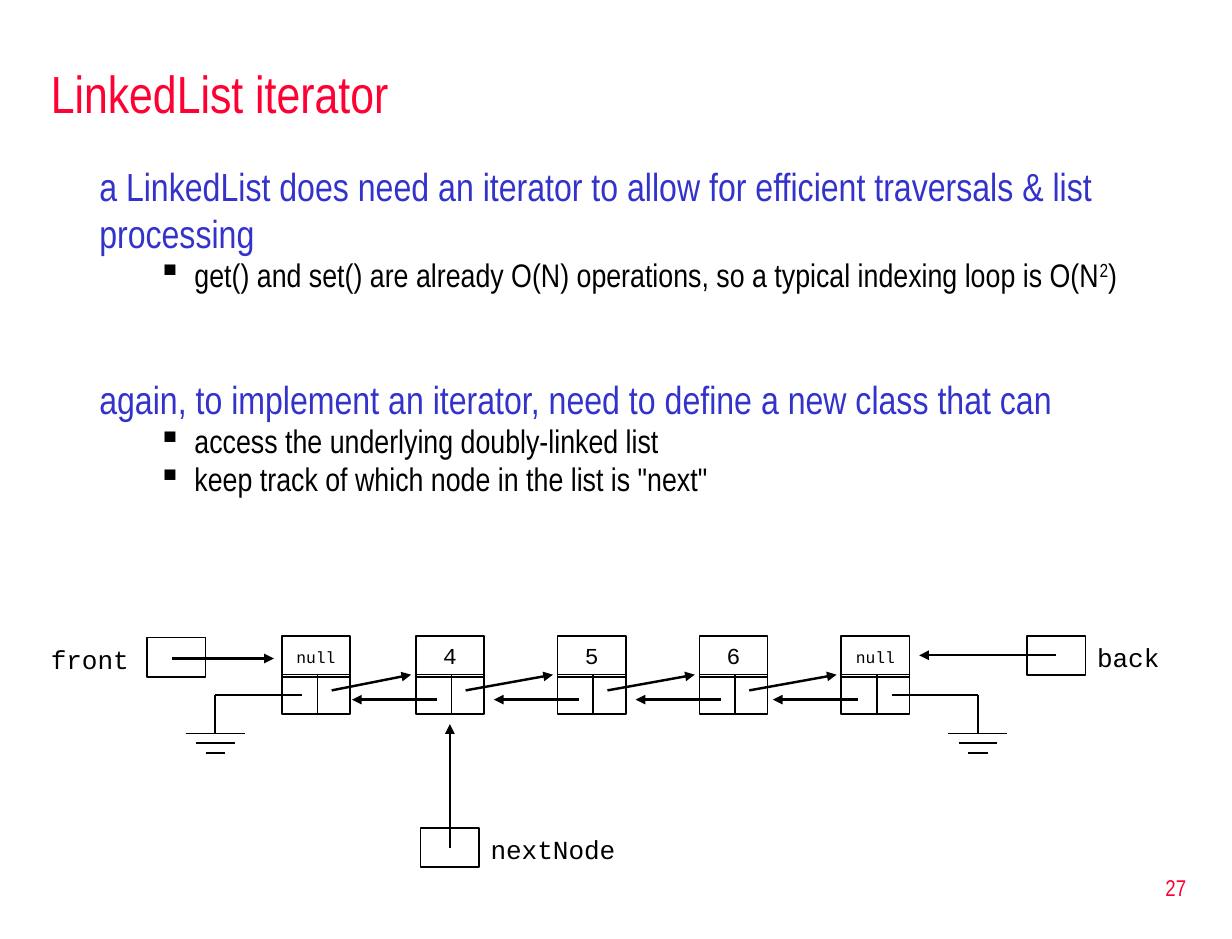
from pptx import Presentation
from pptx import util as u
from pptx.dml.color import RGBColor
from pptx.enum import shapes, text
from pptx.oxml.ns import qn
from lxml import etree

Cm, Pt = u.Cm, u.Pt
COLORS = {"accent": "FF0033", "heading": "3333CC", "ink": "000000"}
SANS, MONO = "Arial Narrow", "Courier New"

CELL_W, VALUE_H, LINKS_H = 1.48, 0.89, 0.85
POINTER_W, POINTER_H = 1.27, 0.85
VALUE_TOP, LINKS_TOP = 13.76, 14.6
BACK_LINK_Y = 15.14


def style(paragraph, size, font, color):
    for run in paragraph.runs:
        run.font.size = Pt(size)
        run.font.name = font
        run.font.color.rgb = RGBColor.from_string(COLORS[color])


def add_label(slide, words, left, top, width, height, size, font=MONO,
              color="ink", anchor=text.MSO_ANCHOR.TOP, align=text.PP_ALIGN.LEFT):
    frame = slide.shapes.add_textbox(Cm(left), Cm(top), Cm(width), Cm(height)).text_frame
    frame.word_wrap = True
    frame.vertical_anchor = anchor
    frame.text = words
    frame.paragraphs[0].alignment = align
    style(frame.paragraphs[0], size, font, color)


def add_line(slide, x1, y1, x2, y2, arrow=False):
    line = slide.shapes.add_connector(
        shapes.MSO_CONNECTOR.STRAIGHT, Cm(x1), Cm(y1), Cm(x2), Cm(y2))
    line.line.color.rgb = RGBColor.from_string(COLORS["ink"])
    line.line.width = Pt(1.5 if arrow else 1)
    if arrow:
        etree.SubElement(line.line._get_or_add_ln(), qn("a:tailEnd"), type="triangle")
    etree.SubElement(line._element.spPr, qn("a:effectLst"))


def add_cell(slide, left, top, width, height):
    cell = slide.shapes.add_shape(
        shapes.MSO_SHAPE.RECTANGLE, Cm(left), Cm(top), Cm(width), Cm(height))
    cell.shadow.inherit = False
    cell.fill.background()
    cell.line.color.rgb = RGBColor.from_string(COLORS["ink"])
    cell.line.width = Pt(1)
    return cell


def add_node(slide, left, value):
    """A value cell above a pair of link cells."""
    add_cell(slide, left, LINKS_TOP, CELL_W, LINKS_H)
    frame = add_cell(slide, left, VALUE_TOP, CELL_W, VALUE_H).text_frame
    is_null = value == "null"
    frame.vertical_anchor = text.MSO_ANCHOR.TOP
    frame.margin_top = Cm(0.25 if is_null else 0.13)
    frame.text = value
    frame.paragraphs[0].alignment = text.PP_ALIGN.CENTER
    style(frame.paragraphs[0], 10 if is_null else 14, MONO, "ink")
    middle = left + CELL_W / 2 + 0.03
    add_line(slide, middle, LINKS_TOP, middle, LINKS_TOP + LINKS_H)


def add_ground(slide, link_x, stem_x):
    """The ground symbol that ends a null link."""
    top, bottom = 15.04, 15.87
    add_line(slide, link_x, top, stem_x, top)
    add_line(slide, stem_x, top, stem_x, bottom)
    for step, half in enumerate((0.64, 0.42, 0.21)):
        y = bottom + 0.21 * step
        add_line(slide, stem_x - half, y, stem_x + half, y)


def add_pointer(slide, name, name_x, name_y, name_w, left, top, arrow):
    add_cell(slide, left, top, POINTER_W, POINTER_H)
    add_label(slide, name, name_x, name_y, name_w, 0.94, 16)
    add_line(slide, *arrow, arrow=True)


def add_points(slide):
    points = [
        (0, 5, "a LinkedList does need an iterator to allow for efficient "
               "traversals & list processing"),
        (1, 4, "get() and set() are already O(N) operations, so a typical "
               "indexing loop is O(N"),
        (0, 50, "again, to implement an iterator, need to define a new class that can"),
        (1, 4, "access the underlying doubly-linked list"),
        (1, 4, 'keep track of which node in the list is "next"'),
    ]
    frame = slide.shapes.add_textbox(Cm(1.9), Cm(3.38), Cm(23.5), Cm(8.05)).text_frame
    frame.word_wrap = True
    for number, (level, gap, words) in enumerate(points):
        point = frame.paragraphs[0] if number == 0 else frame.add_paragraph()
        point.text = words
        point.level = level
        point.space_before = Pt(gap)
        if words.endswith("O(N"):
            exponent = point.add_run()
            exponent.text = "2"
            exponent.font._element.set("baseline", "30000")
            point.add_run().text = ")"
        if level == 0:
            style(point, 24, SANS, "heading")
            continue
        style(point, 20, SANS, "ink")
        point.line_spacing = 0.8
        properties = point._p.get_or_add_pPr()
        properties.set("marL", str(Cm(2.06)))
        properties.set("indent", str(-Cm(0.79)))
        etree.SubElement(properties, qn("a:buChar"), char="▪")


def add_linked_list(slide):
    lefts = [6.1] + [9 + 3.07 * step for step in range(4)]
    for left, value in zip(lefts, ("null", "4", "5", "6", "null")):
        add_node(slide, left, value)
    for left, following in zip(lefts, lefts[1:]):
        add_line(slide, left + 1.08, 14.94, following - 0.1, 14.6, arrow=True)
        tail = following + (0.36 if following == lefts[-1] else 0.46)
        add_line(slide, tail, BACK_LINK_Y, tail - 1.84, BACK_LINK_Y, arrow=True)
    add_ground(slide, 6.53, 4.66)
    add_ground(slide, 19.3, 21.17)


def main():
    deck = Presentation()
    deck.slide_width, deck.slide_height = Cm(26.67), Cm(20.32)
    slide = deck.slides.add_slide(deck.slide_layouts[6])

    middle = text.MSO_ANCHOR.MIDDLE
    add_label(slide, "27", 20.37, 18.52, 5.56, 1.35, 14, SANS, "accent",
              middle, text.PP_ALIGN.RIGHT)
    add_label(slide, "LinkedList iterator", 0.85, 1.06, 25.2, 1.9, 32, SANS,
              "accent", middle)
    add_points(slide)
    add_linked_list(slide)
    add_pointer(slide, "front", 0.85, 13.8, 2.33, 3.18, 13.8,
                (3.73, 14.25, 5.93, 14.25))
    add_pointer(slide, "back", 23.5, 13.76, 2.33, 22.23, 13.76,
                (22.86, 14.18, 19.9, 14.18))
    add_pointer(slide, "nextNode", 10.37, 17.92, 3.39, 9.1, 17.92,
                (9.74, 18.34, 9.74, 15.67))
    deck.save("out.pptx")


if __name__ == "__main__":
    main()
